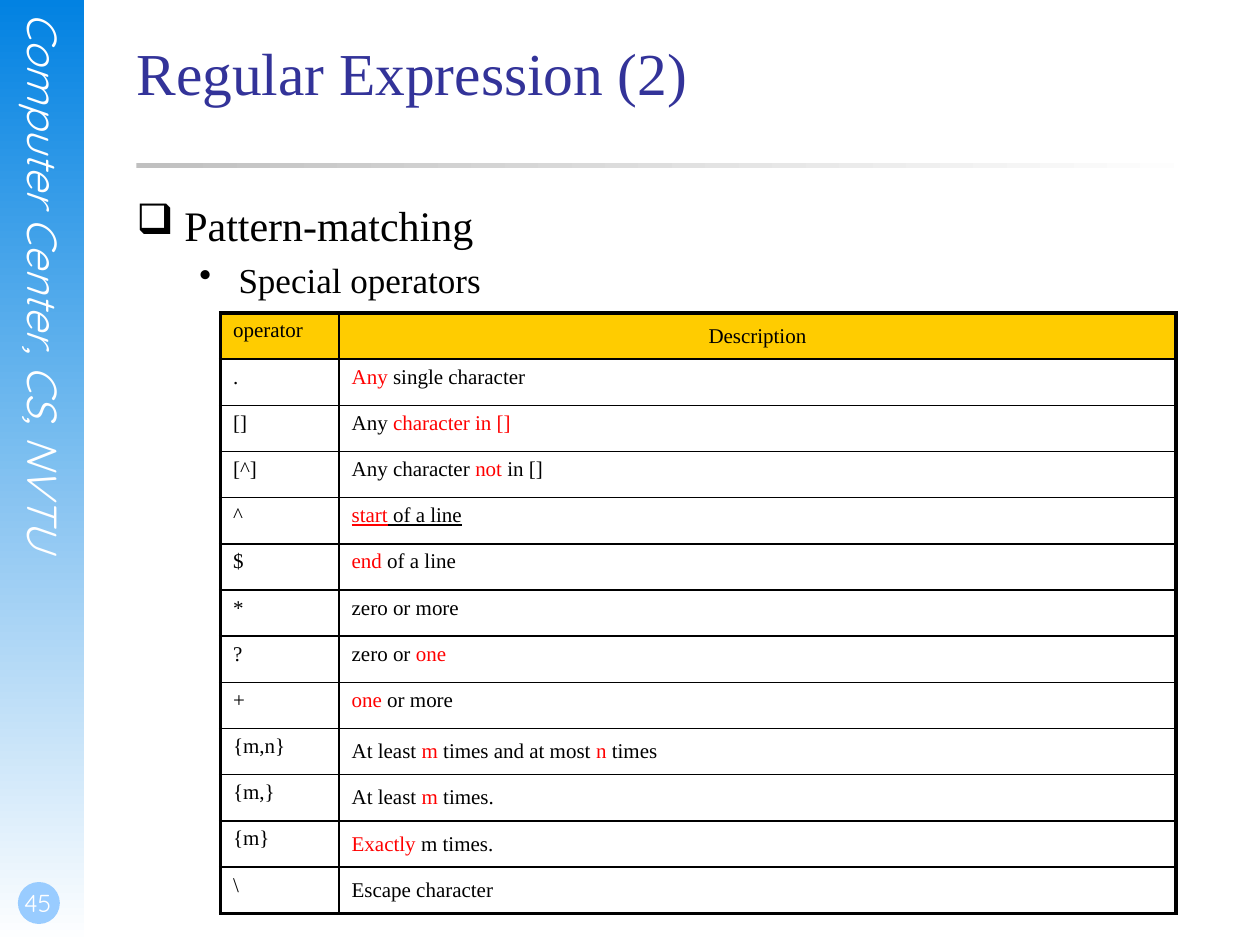
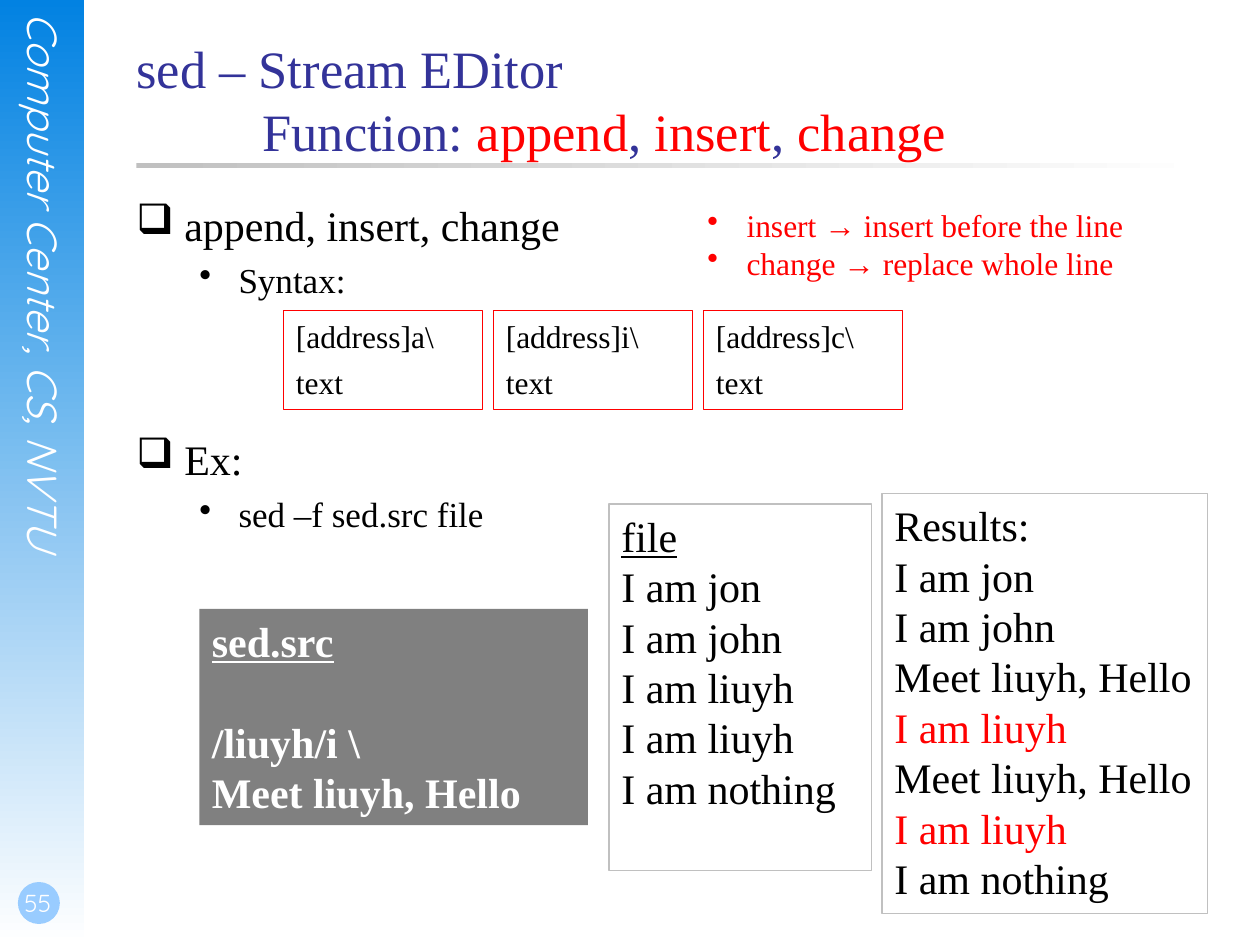
"""Build two lecture slides on regular expressions and the sed stream editor."""
import pptx
import pptx.dml.color
import pptx.enum.shapes
import pptx.enum.text
import pptx.oxml.ns
import pptx.util
import lxml.etree

THEME = {
    "serif": "Times New Roman", "sans": "Quicksand",
    "black": "000000", "white": "FFFFFF", "red": "FF0000", "title": "333399",
    "band": "0282E2", "badge": "99CCFF", "silver": "C0C0C0", "gray": "808080", "header": "FFCC00",
    "title_size": 34, "long_title_size": 30, "body_size": 24, "sub_size": 20,
    "note_size": 18, "page_size": 14, "table_size": 12,
}
SHAPE = pptx.enum.shapes.MSO_SHAPE
ANCHOR = pptx.enum.text.MSO_ANCHOR
ALIGN = pptx.enum.text.PP_ALIGN
RGB = pptx.dml.color.RGBColor.from_string
Pt = pptx.util.Pt

presentation = pptx.Presentation()
presentation.slide_width = pptx.util.Inches(10)
presentation.slide_height = pptx.util.Inches(7.5)
COLUMN = presentation.slide_width / 120
ROW = presentation.slide_height / 90
INSET = pptx.util.Inches(0.1)


def add_box(slide, area, fill=None, line=None, kind=SHAPE.RECTANGLE, inset=0, wrap=True,
            anchor=ANCHOR.TOP):
    """Add a shape on the grid; a pair of fill colours makes a gradient."""
    left, top, width, height = area
    shape = slide.shapes.add_shape(kind, round(left * COLUMN), round(top * ROW),
                                   round(width * COLUMN), round(height * ROW))
    shape.shadow.inherit = False
    if isinstance(fill, tuple):
        shape.fill.gradient()
        shape.fill.gradient_angle = 270 if height > width else 0
        for stop, color, position in zip(shape.fill.gradient_stops, fill, (0, 1)):
            stop.color.rgb = RGB(color)
            stop.position = position
    elif fill:
        shape.fill.solid()
        shape.fill.fore_color.rgb = RGB(fill)
    else:
        shape.fill.background()
    if line:
        shape.line.color.rgb = RGB(line[0])
        shape.line.width = Pt(line[1])
    else:
        shape.line.fill.background()
    frame_format = {"margin_left": inset, "margin_right": inset, "margin_top": inset // 2,
                    "margin_bottom": inset // 2, "word_wrap": wrap, "vertical_anchor": anchor}
    for name, value in frame_format.items():
        setattr(shape.text_frame, name, value)
    return shape


def write(frame, lines, size, color=THEME["black"], font="serif", align=ALIGN.LEFT, **common):
    """Write paragraphs of (text, format); parts between bars are red."""
    for index, line in enumerate(lines):
        text, own = line if isinstance(line, tuple) else (line, {})
        style = {"size": size, **common, **own}
        paragraph = frame.paragraphs[0] if index == 0 else frame.add_paragraph()
        paragraph.alignment = align
        paragraph.space_before = Pt(style.get("before", 0))
        properties = paragraph._p.get_or_add_pPr()
        if "indent" in style:
            margin, hanging = style["indent"]
            properties.set("marL", str(pptx.util.Inches(margin)))
            properties.set("indent", str(pptx.util.Inches(hanging)))
        if "bullet" in style:
            lxml.etree.SubElement(properties, pptx.oxml.ns.qn("a:buChar"), char=style["bullet"])
        for part, words in enumerate(text.split("|")):
            if words:
                run = paragraph.add_run()
                run.text = words
                run.font.color.rgb = RGB(THEME["red"] if part % 2 else color)
                font_format = {"name": THEME[font], "size": Pt(style["size"]),
                               "bold": style.get("bold"), "italic": style.get("italic"),
                               "underline": style.get("underline")}
                for name, value in font_format.items():
                    setattr(run.font, name, value)


TOPIC = {"bullet": "❑", "indent": (0.38, -0.38), "before": 6}
POINT = {"bullet": "•", "indent": (0.81, -0.31), "before": 5, "size": THEME["sub_size"]}
NOTE = {"bullet": "•", "indent": (0.31, -0.31)}
UNDERLINE = {"underline": True}

pages = [
    ("45", ["Regular Expression (2)"], THEME["title_size"],
     [("Pattern-matching", TOPIC), ("Special operators", POINT)]),
    ("55", ["sed – Stream EDitor",
            ("Function: |append|, |insert|, |change", {"indent": (1, 0)})], THEME["long_title_size"],
     [("append, insert, change", TOPIC), ("Syntax:", POINT),
      ("Ex:", {**TOPIC, "before": 76}), ("sed –f sed.src file", POINT)]),
]
slides = []
for number, title, title_size, body in pages:
    slide = presentation.slides.add_slide(presentation.slide_layouts[6])
    slides.append(slide)
    add_box(slide, (0, 0, 8, 90), fill=(THEME["band"], THEME["white"]))
    label = add_box(slide, (1.8, 1.2, 4.8, 61.3))
    label.text_frame._txBody.bodyPr.set("vert", "eaVert")
    write(label.text_frame, ["Computer Center, CS, NVTU"], THEME["body_size"], THEME["white"],
          "sans", italic=True)
    add_box(slide, (1.7, 84, 4, 4), fill=THEME["badge"], kind=SHAPE.OVAL)
    page = add_box(slide, (0.2, 82, 6.8, 5.4), anchor=ANCHOR.BOTTOM)
    write(page.text_frame, [number], THEME["page_size"], THEME["white"], "sans", ALIGN.CENTER)
    add_box(slide, (13, 15.5, 102, 0.5), fill=(THEME["silver"], THEME["white"]))
    write(add_box(slide, (13, 3.4, 102, 15)).text_frame, title, title_size, THEME["title"])
    write(add_box(slide, (13, 19, 102, 61)).text_frame, body, THEME["body_size"])

operator_slide, sed_slide = slides

operators = [
    ("operator", "Description"),
    (".", "|Any| single character"),
    ("[]", "Any |character in []"),
    ("[^]", "Any character |not| in []"),
    ("^", "|start| of a line"),
    ("$", "|end| of a line"),
    ("*", "zero or more"),
    ("?", "zero or |one"),
    ("+", "|one| or more"),
    ("{m,n}", "At least |m| times and at most |n| times"),
    ("{m,}", "At least |m| times."),
    ("{m}", "|Exactly| m times."),
    ("\\", "Escape character"),
]
last_row = len(operators) - 1
table = operator_slide.shapes.add_table(
    len(operators), 2, round(21 * COLUMN), round(29.8 * ROW),
    round(91 * COLUMN), round(57.2 * ROW)).table
for name in ("first_row", "horz_banding"):
    setattr(table, name, False)
for column, width in zip(table.columns, (11.3, 79.7)):
    column.width = round(width * COLUMN)
for row_index, texts in enumerate(operators):
    table.rows[row_index].height = round(57.2 * ROW / len(operators))
    for column_index, text in enumerate(texts):
        cell = table.cell(row_index, column_index)
        is_header = row_index == 0
        is_middle = column_index == 1 and (is_header or row_index >= 9)
        cell_format = {"margin_left": INSET, "margin_right": INSET, "margin_top": INSET // 2,
                       "margin_bottom": INSET // 2,
                       "vertical_anchor": ANCHOR.MIDDLE if is_middle else ANCHOR.TOP}
        for name, value in cell_format.items():
            setattr(cell, name, value)
        if is_header:
            cell.fill.solid()
            cell.fill.fore_color.rgb = RGB(THEME["header"])
        else:
            cell.fill.background()
        write(cell.text_frame, [text], THEME["table_size"],
              align=ALIGN.CENTER if is_header and column_index else ALIGN.LEFT,
              underline="start" in text)
        outer_edges = {"lnL": column_index == 0, "lnR": column_index == 1,
                       "lnT": is_header, "lnB": row_index == last_row}
        for position, (edge, is_outer) in enumerate(outer_edges.items()):
            border = lxml.etree.Element(pptx.oxml.ns.qn("a:" + edge),
                                        w=str(Pt(2.25 if is_outer else 1)))
            solid = lxml.etree.SubElement(border, pptx.oxml.ns.qn("a:solidFill"))
            lxml.etree.SubElement(solid, pptx.oxml.ns.qn("a:srgbClr"), val=THEME["black"])
            cell._tc.get_or_add_tcPr().insert(position, border)

script_box = add_box(sed_slide, (19, 58, 37, 20.6), fill=THEME["gray"], inset=INSET)
write(script_box.text_frame,
      [("sed.src", UNDERLINE), ("/liuyh/i \\", {"before": 29}), "Meet liuyh, Hello"],
      THEME["body_size"], THEME["white"], bold=True)

silver_line = (THEME["silver"], 0.75)
file_box = add_box(sed_slide, (58, 48, 25, 34.9), line=silver_line, inset=INSET)
write(file_box.text_frame,
      [("file", UNDERLINE), "I am jon", "I am john", "I am liuyh", "I am liuyh", "I am nothing"],
      THEME["body_size"])

results_box = add_box(sed_slide, (84, 47, 31, 40), line=silver_line, inset=INSET, wrap=False)
write(results_box.text_frame,
      ["Results:", "I am jon", "I am john", *["Meet liuyh, Hello", "|I am liuyh"] * 2,
       "I am nothing"], THEME["body_size"])

for index, command in enumerate("aic"):
    syntax_box = add_box(sed_slide, (27 + 20 * index, 29.6, 19, 9.4),
                         line=(THEME["red"], 0.5), inset=INSET)
    write(syntax_box.text_frame, [f"[address]{command}\\", "text"], THEME["note_size"], before=4.5)

note_box = add_box(sed_slide, (66.2, 19, 42.4, 8.5), inset=INSET)
write(note_box.text_frame,
      [("insert → insert before the line", NOTE), ("change → replace whole line", NOTE)],
      THEME["note_size"], THEME["red"])

presentation.save("out.pptx")
